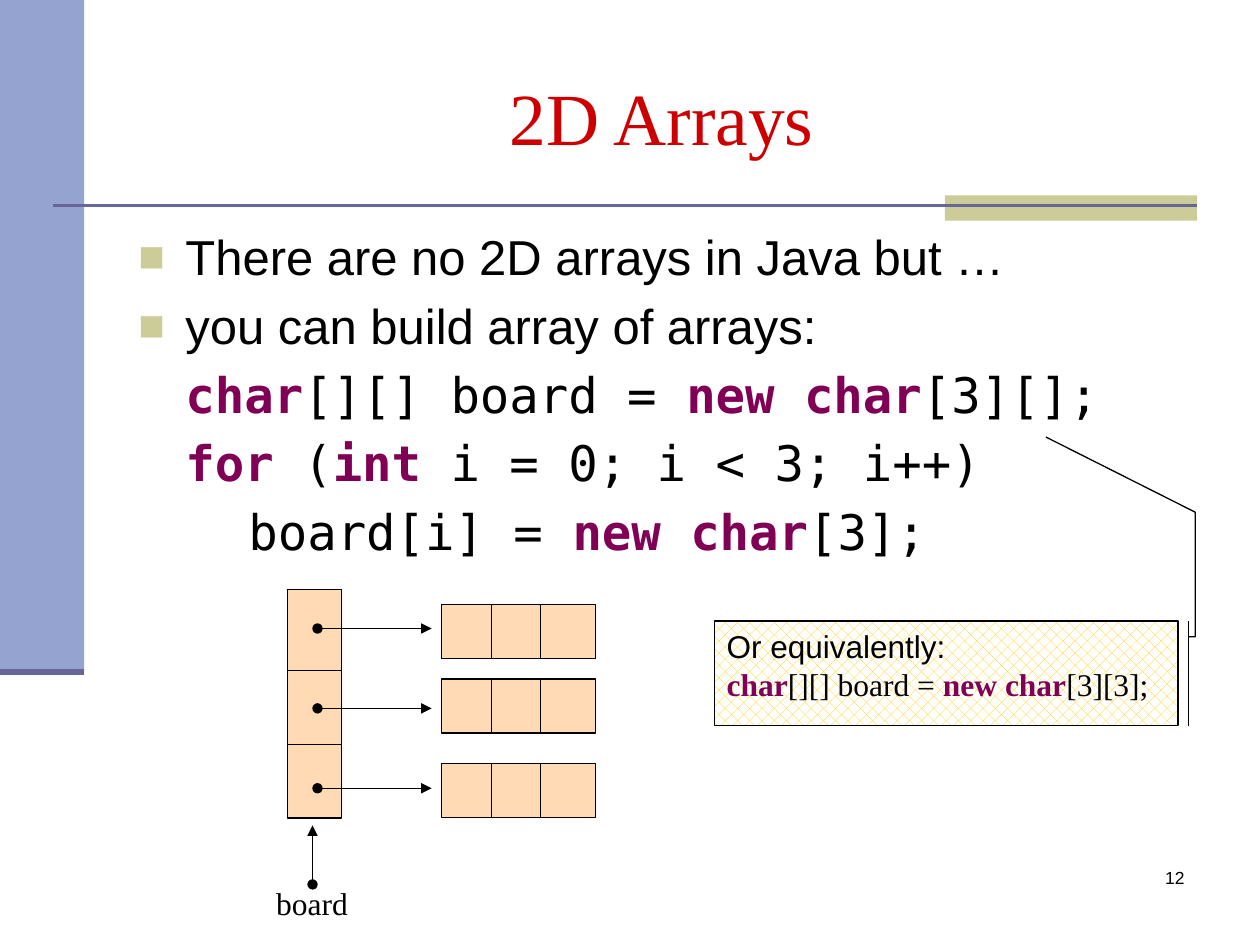
from dataclasses import dataclass

from lxml.etree import SubElement
from pptx import Presentation
from pptx.dml.color import RGBColor as RGB
from pptx.enum.dml import MSO_PATTERN as Pattern
from pptx.enum.shapes import MSO_CONNECTOR as Connector, MSO_SHAPE as Shape
from pptx.enum.text import MSO_ANCHOR as Anchor, PP_ALIGN as Align
from pptx.oxml.ns import qn
from pptx.util import Cm, Pt


@dataclass(frozen=True)
class Theme:
    black: str = "000000"
    white: str = "FFFFFF"
    title: str = "CC0000"
    keyword: str = "7F0055"
    sidebar: str = "95A3D1"
    rule: str = "666699"
    accent: str = "CCCC99"
    cell: str = "FFDAB5"
    hatch: str = "FFCC00"
    sans: str = "Arial"
    serif: str = "Times New Roman"
    mono: str = "DejaVu Sans Mono"
    title_size: float = 42
    body_size: float = 28
    note_size: float = 18
    number_size: float = 10
    thin: float = 0.75


@dataclass(frozen=True)
class Box:
    """Position and size in centimetres."""
    left: float
    top: float
    width: float
    height: float

    @property
    def right(self) -> float:
        return self.left + self.width

    @property
    def bottom(self) -> float:
        return self.top + self.height

    def lengths(self) -> tuple:
        return Cm(self.left), Cm(self.top), Cm(self.width), Cm(self.height)


@dataclass(frozen=True)
class TextLine:
    """One paragraph; keywords stand between asterisks."""
    text: str
    font: str
    bullet: bool = False


THEME = Theme()

BODY_LINES = [
    TextLine("There are no 2D arrays in Java but …", THEME.sans, True),
    TextLine("you can build array of arrays:", THEME.sans, True),
    TextLine("\t*char*[][] board = *new char*[3][];", THEME.mono),
    TextLine("\t*for* (*int *i = 0; i < 3; i++)", THEME.mono),
    TextLine("\t\tboard[i] = *new char*[3];", THEME.mono),
]
NOTE_LINES = [
    TextLine("Or equivalently:", THEME.sans),
    TextLine("*char*[][] board = *new char*[3][3];", THEME.serif),
]

# Diagram geometry
BOARD = Box(5.79, 11.89, 1.09, 4.6)
BOARD_DIVIDERS = (13.51, 15.01)
ROWS = [Box(8.9, top, 3.1, 1.09) for top in (12.19, 13.69, 15.39)]
ROW_DIVIDERS = (9.91, 10.9)
POINTER_TOP, POINTER_STEP = 12.67, 1.61
NOTE = Box(14.4, 12.52, 9.35, 2.11)
NOTE_LEADER = (0.151, 1.023, 0.151, 1.037, -1.04, 1.037, -1.758, 0.715)


def add_rect(slide, box: Box, fill: str, outline: str | None = None) -> None:
    rect = slide.shapes.add_shape(Shape.RECTANGLE, *box.lengths())
    rect.shadow.inherit = False
    rect.fill.solid()
    rect.fill.fore_color.rgb = RGB.from_string(fill)
    if outline:
        rect.line.color.rgb = RGB.from_string(outline)
        rect.line.width = Pt(THEME.thin)
    else:
        rect.line.fill.background()


def add_line(slide, start: tuple, end: tuple, color: str = THEME.black,
             width: float = THEME.thin, pointer: bool = False) -> None:
    line = slide.shapes.add_connector(
        Connector.STRAIGHT, *(Cm(value) for value in (*start, *end)))
    line.line.color.rgb = RGB.from_string(color)
    line.line.width = Pt(width)
    if pointer:
        outline = line.line._get_or_add_ln()
        SubElement(outline, qn("a:headEnd"), type="oval")
        SubElement(outline, qn("a:tailEnd"), type="triangle")
    SubElement(line._element.spPr, qn("a:effectLst"))


def add_runs(paragraph, line: TextLine, size: float, color: str) -> None:
    for index, part in enumerate(line.text.split("*")):
        if part:
            run = paragraph.add_run()
            run.text = part
            is_keyword = index % 2 == 1
            run.font.name = line.font
            run.font.size = Pt(size)
            run.font.bold = is_keyword
            run.font.color.rgb = RGB.from_string(
                THEME.keyword if is_keyword else color)


def fill_frame(frame, lines: list[TextLine], size: float,
               color: str = THEME.black, align: Align = Align.LEFT) -> None:
    for index, line in enumerate(lines):
        paragraph = frame.add_paragraph() if index else frame.paragraphs[0]
        paragraph.alignment = align
        add_runs(paragraph, line, size, color)


def add_text(slide, box: Box, lines: list[TextLine], size: float,
             color: str = THEME.black, align: Align = Align.LEFT,
             anchor: Anchor = Anchor.TOP, wrap: bool = True):
    frame = slide.shapes.add_textbox(*box.lengths()).text_frame
    frame.word_wrap = wrap
    frame.vertical_anchor = anchor
    fill_frame(frame, lines, size, color, align)
    return frame


def set_list_format(paragraph, bullet: bool) -> None:
    """Hanging indent, 20 % space before and an optional square bullet."""
    props = paragraph._p.get_or_add_pPr()
    props.set("marL", str(Cm(0.95)))
    props.set("indent", str(-Cm(0.95)))
    SubElement(SubElement(props, qn("a:spcBef")), qn("a:spcPct"), val="20000")
    if bullet:
        bullet_color = SubElement(props, qn("a:buClr"))
        SubElement(bullet_color, qn("a:srgbClr"), val=THEME.accent)
        SubElement(props, qn("a:buSzPct"), val="90000")
        SubElement(props, qn("a:buFont"), typeface=THEME.sans)
        SubElement(props, qn("a:buChar"), char="■")


def add_note(slide) -> None:
    note = slide.shapes.add_shape(
        Shape.LINE_CALLOUT_3_BORDER_AND_ACCENT_BAR, *NOTE.lengths())
    for index, value in enumerate(NOTE_LEADER):
        note.adjustments[index] = value
    note.shadow.inherit = False
    note.fill.patterned()
    note.fill.pattern = Pattern.PERCENT_30
    note.fill.fore_color.rgb = RGB.from_string(THEME.hatch)
    note.fill.back_color.rgb = RGB.from_string(THEME.white)
    note.line.color.rgb = RGB.from_string(THEME.black)
    note.line.width = Pt(THEME.thin)
    note.text_frame.vertical_anchor = Anchor.TOP
    fill_frame(note.text_frame, NOTE_LINES, THEME.note_size)


def add_diagram(slide) -> None:
    add_rect(slide, BOARD, THEME.cell, THEME.black)
    for y in BOARD_DIVIDERS:
        add_line(slide, (BOARD.left, y), (BOARD.right, y))
    for index, row in enumerate(ROWS):
        add_rect(slide, row, THEME.cell, THEME.black)
        for x in ROW_DIVIDERS:
            add_line(slide, (x, row.top), (x, row.bottom))
        y = POINTER_TOP + index * POINTER_STEP
        add_line(slide, (6.4, y), (8.7, y), pointer=True)
    add_text(slide, Box(5.31, 17.7, 1.96, 1.02), [TextLine("board", THEME.serif)],
             THEME.note_size, align=Align.CENTER, wrap=False)
    add_line(slide, (6.3, 17.83), (6.3, 16.64), pointer=True)


def main() -> None:
    deck = Presentation()
    deck.slide_width, deck.slide_height = Cm(25.4), Cm(19.05)
    slide = deck.slides.add_slide(deck.slide_layouts[6])

    # Background decoration
    add_rect(slide, Box(0, 0, 1.7, 13.54), THEME.sidebar)
    add_rect(slide, Box(19.05, 3.94, 5.08, 0.51), THEME.accent)
    add_line(slide, (1.07, 4.14), (24.13, 4.14), THEME.rule, 1.5)
    add_line(slide, (0, 13.54), (1.7, 13.54), THEME.rule, 3.5)

    # Page number, title and body
    add_text(slide, Box(18.85, 17.35, 5.28, 1.27), [TextLine("12", THEME.sans)],
             THEME.number_size, align=Align.RIGHT)
    add_text(slide, Box(2.54, 0.76, 21.59, 3.18), [TextLine("2D Arrays", THEME.serif)],
             THEME.title_size, THEME.title, Align.CENTER, Anchor.MIDDLE)
    body = add_text(slide, Box(2.54, 4.45, 21.59, 12.57), BODY_LINES, THEME.body_size)
    for paragraph, line in zip(body.paragraphs, BODY_LINES):
        set_list_format(paragraph, line.bullet)

    # Array diagram and side note
    add_diagram(slide)
    add_note(slide)
    deck.save("out.pptx")


if __name__ == "__main__":
    main()
